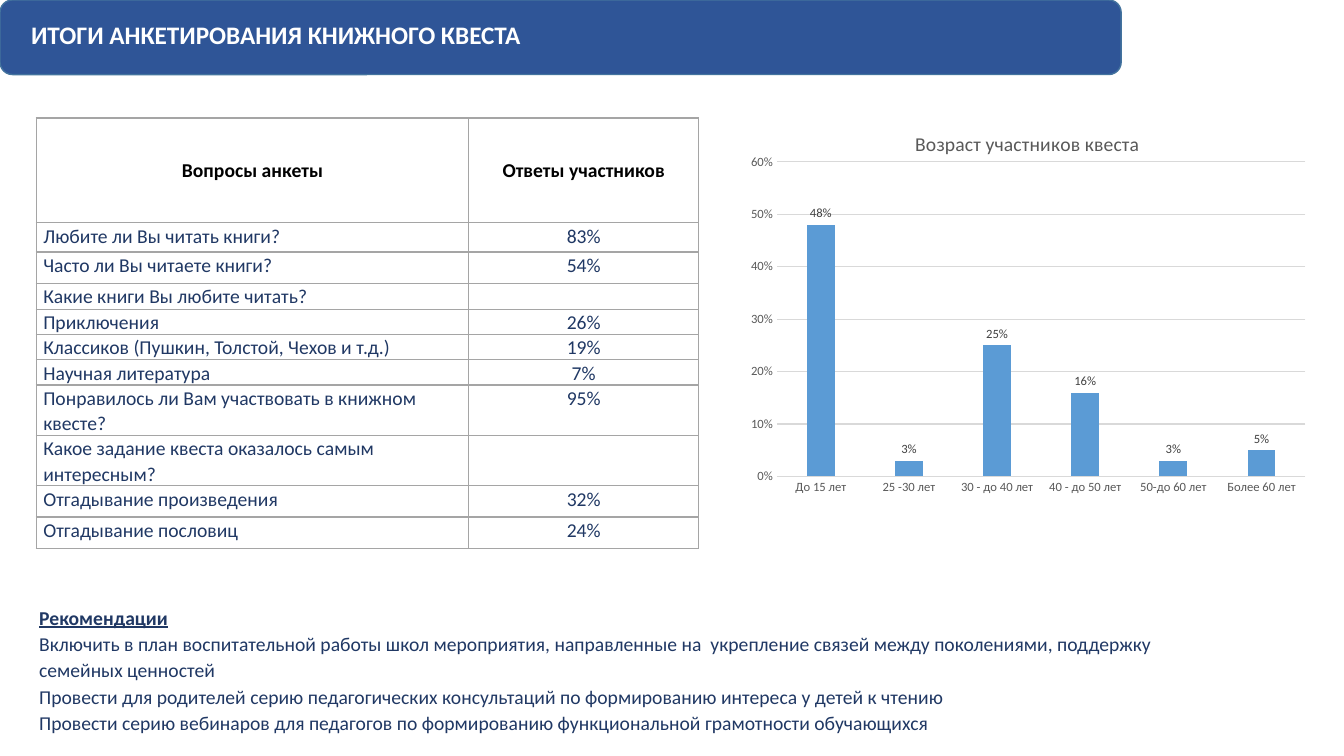
from lxml import etree
from pptx import Presentation
from pptx.chart.data import CategoryChartData
from pptx.dml.color import RGBColor
from pptx.enum.chart import XL_CHART_TYPE, XL_LABEL_POSITION, XL_TICK_MARK
from pptx.enum.shapes import MSO_SHAPE
from pptx.enum.text import MSO_ANCHOR, MSO_AUTO_SIZE, PP_ALIGN
from pptx.oxml.ns import qn
from pptx.util import Inches, Pt

COLUMNS = XL_CHART_TYPE.COLUMN_CLUSTERED
LABEL_ABOVE = XL_LABEL_POSITION.OUTSIDE_END
NO_TICK = XL_TICK_MARK.NONE
ROUNDED = MSO_SHAPE.ROUNDED_RECTANGLE
MIDDLE, TOP = MSO_ANCHOR.MIDDLE, MSO_ANCHOR.TOP
CENTER, LEFT = PP_ALIGN.CENTER, PP_ALIGN.LEFT
GROW = MSO_AUTO_SIZE.SHAPE_TO_FIT_TEXT

WHITE = RGBColor(0xFF, 0xFF, 0xFF)
BLACK = RGBColor(0, 0, 0)
BANNER_BLUE = RGBColor(0x2F, 0x55, 0x97)
BANNER_EDGE = RGBColor(0x43, 0x73, 0x9E)
NAVY = RGBColor(0x20, 0x38, 0x64)
BAR_BLUE = RGBColor(0x5B, 0x9B, 0xD5)
AXIS_TEXT = RGBColor(0x59, 0x59, 0x59)
LABEL_TEXT = RGBColor(0x40, 0x40, 0x40)
GRID_GRAY = RGBColor(0xD9, 0xD9, 0xD9)
BORDER_GRAY = RGBColor(0xA5, 0xA5, 0xA5)

# question, answer, row height
SURVEY = [
    ("Вопросы анкеты", "Ответы участников", 1.04),
    ("Любите ли Вы читать книги?", "83%", 0.29),
    ("Часто ли Вы читаете книги?", "54%", 0.31),
    ("Какие книги Вы любите читать?", "", 0.26),
    ("Приключения", "26%", 0.25),
    ("Классиков (Пушкин, Толстой, Чехов и т.д.)", "19%", 0.25),
    ("Научная литература", "7%", 0.25),
    ("Понравилось ли Вам участвовать в книжном квесте?", "95%", 0.5),
    ("Какое задание квеста оказалось самым интересным?", "", 0.5),
    ("Отгадывание произведения", "32%", 0.31),
    ("Отгадывание пословиц", "24%", 0.31),
]
AGES = {
    "До 15 лет": 0.48,
    "25 -30 лет": 0.03,
    "30 - до 40 лет": 0.25,
    "40 - до 50 лет": 0.16,
    "50-до 60 лет": 0.03,
    "Более 60 лет": 0.05,
}
ADVICE = [
    "Включить в план воспитательной работы школ мероприятия, направленные на  "
    "укрепление связей между поколениями, поддержку семейных ценностей",
    "Провести для родителей серию педагогических консультаций по формированию "
    "интереса у детей к чтению",
    "Провести серию вебинаров для педагогов по формированию функциональной "
    "грамотности обучающихся",
]


class SlideBuilder:
    font_name = "Calibri"

    def __init__(self, page):
        self.page = page

    def style_font(self, font, size, color, bold=False):
        font.name, font.size, font.bold = self.font_name, Pt(size), bold
        font.color.rgb = color

    def add_span(self, para, text, size, color, bold=False, underline=False):
        span = para.add_run()
        span.text = text
        self.style_font(span.font, size, color, bold)
        span.font.underline = underline

    def add_banner(self, left, top, width, height):
        banner = self.page.shapes.add_shape(
            ROUNDED, Inches(left), Inches(top), Inches(width), Inches(height))
        banner.shadow.inherit = False
        banner.fill.solid()
        banner.fill.fore_color.rgb = BANNER_BLUE
        banner.line.color.rgb = BANNER_EDGE
        banner.line.width = Pt(1)

    def add_text(self, left, top, width, height, heading, size, color,
                 underline=False, body=()):
        """Add a bold heading followed by plain body paragraphs."""
        box = self.page.shapes.add_textbox(
            Inches(left), Inches(top), Inches(width), Inches(height))
        frame = box.text_frame
        frame.word_wrap = True
        frame.auto_size = GROW
        self.add_span(frame.paragraphs[0], heading, size, color, True, underline)
        for text in body:
            para = frame.add_paragraph()
            para.line_spacing = 1.12
            self.add_span(para, text, size, color)

    def add_borders(self, cell):
        props = cell._tc.get_or_add_tcPr()
        for side in ("a:lnL", "a:lnR", "a:lnT", "a:lnB"):
            line = etree.SubElement(props, qn(side), w=str(Pt(1)))
            fill = etree.SubElement(line, qn("a:solidFill"))
            etree.SubElement(fill, qn("a:srgbClr"), val=str(BORDER_GRAY))

    def fill_cell(self, cell, text, header, align):
        self.add_borders(cell)
        cell.fill.background()
        cell.margin_left = cell.margin_right = Inches(0.07)
        cell.margin_top = cell.margin_bottom = 0
        cell.vertical_anchor = MIDDLE if header else TOP
        para = cell.text_frame.paragraphs[0]
        para.alignment = align
        para.line_spacing = 1.07
        if text:
            self.add_span(para, text, 14, BLACK if header else NAVY, header)
        else:
            # keeps an empty cell from stretching its row
            etree.SubElement(para._p, qn("a:endParaRPr"), sz="1400")

    def add_survey(self, left, top, widths, rows):
        height = sum(row[2] for row in rows)
        table = self.page.shapes.add_table(
            len(rows), len(widths), Inches(left), Inches(top),
            Inches(sum(widths)), Inches(height)).table
        table.first_row = table.horz_banding = False
        for column, width in zip(table.columns, widths):
            column.width = Inches(width)
        for index, (question, answer, row_height) in enumerate(rows):
            header = index == 0
            table.rows[index].height = Inches(row_height)
            self.fill_cell(table.cell(index, 0), question, header,
                           CENTER if header else LEFT)
            self.fill_cell(table.cell(index, 1), answer, header, CENTER)

    def place_plot(self, chart, x, y, w, h):
        """Fix the inner plot area, in fractions of the chart."""
        area = chart._chartSpace.chart.plotArea
        for old in area.findall(qn("c:layout")):
            area.remove(old)
        layout = etree.Element(qn("c:layout"))
        area.insert(0, layout)
        manual = etree.SubElement(layout, qn("c:manualLayout"))
        settings = {"layoutTarget": "inner", "xMode": "edge", "yMode": "edge",
                    "x": x, "y": y, "w": w, "h": h}
        for name, value in settings.items():
            etree.SubElement(manual, qn("c:" + name), val=str(value))

    def add_age_chart(self, left, top, width, height, title, ages):
        data = CategoryChartData(number_format="0%")
        data.categories = list(ages)
        data.add_series("Series 1", list(ages.values()))
        chart = self.page.shapes.add_chart(
            COLUMNS, Inches(left), Inches(top), Inches(width), Inches(height),
            data).chart
        self.style_font(chart.font, 10, BLACK)
        chart.has_legend = False
        chart.has_title = True
        self.add_span(chart.chart_title.text_frame.paragraphs[0], title, 14,
                      AXIS_TEXT)
        self.place_plot(chart, 0.073, 0.123, 0.901, 0.788)

        for axis in (chart.category_axis, chart.value_axis):
            axis.major_tick_mark = axis.minor_tick_mark = NO_TICK
            self.style_font(axis.tick_labels.font, 9, AXIS_TEXT)
        values = chart.value_axis
        values.minimum_scale, values.maximum_scale = 0, 0.6
        values.major_unit = 0.1
        values.tick_labels.number_format = "0%"
        values.tick_labels.number_format_is_linked = False
        values.format.line.fill.background()
        for line in (chart.category_axis.format.line,
                     values.major_gridlines.format.line):
            line.color.rgb = GRID_GRAY
            line.width = Pt(0.75)

        plot = chart.plots[0]
        plot.vary_by_categories = False
        plot.gap_width, plot.overlap = 219, -27
        series = plot.series[0]
        series.format.fill.solid()
        series.format.fill.fore_color.rgb = BAR_BLUE
        labels = series.data_labels
        labels.show_value = True
        labels.position = LABEL_ABOVE
        labels.number_format = "0%"
        labels.number_format_is_linked = False
        self.style_font(labels.font, 9, LABEL_TEXT)


def main():
    deck = Presentation()
    deck.slide_width, deck.slide_height = Inches(13.33), Inches(7.5)
    builder = SlideBuilder(deck.slides.add_slide(deck.slide_layouts[6]))
    builder.add_banner(0, 0, 11.12, 0.74)
    builder.add_text(0.21, 0.14, 9.94, 0.4,
                     "ИТОГИ АНКЕТИРОВАНИЯ КНИЖНОГО КВЕСТА", 18, WHITE)
    builder.add_survey(0.36, 1.17, (4.29, 2.28), SURVEY)
    builder.add_age_chart(7.28, 1.12, 5.82, 3.96, "Возраст участников квеста", AGES)
    builder.add_text(0.29, 5.96, 11.3, 1.63, "Рекомендации", 14, NAVY,
                     underline=True, body=ADVICE)
    deck.save("out.pptx")


if __name__ == "__main__":
    main()
